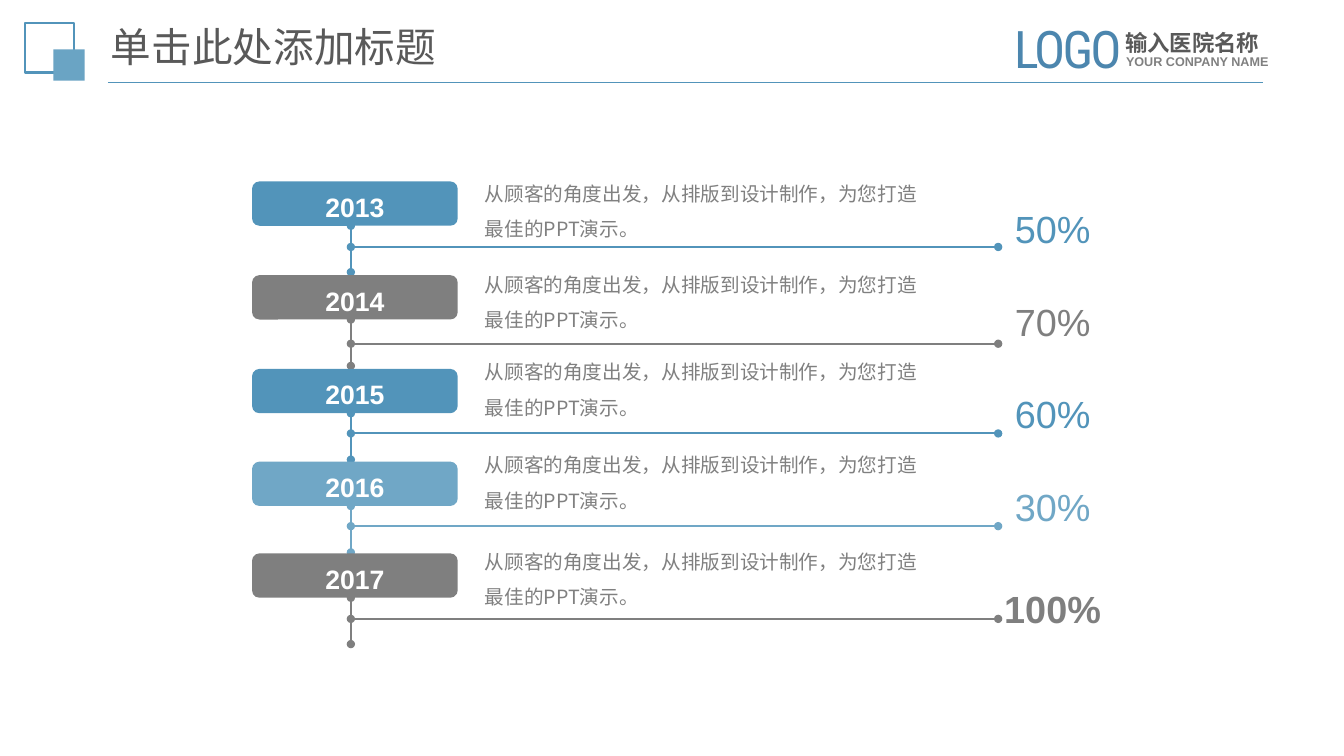
from dataclasses import dataclass
from lxml.etree import SubElement
from pptx import Presentation
from pptx.dml.color import RGBColor
from pptx.enum.shapes import MSO_CONNECTOR, MSO_SHAPE
from pptx.enum.text import MSO_ANCHOR, MSO_AUTO_SIZE, PP_ALIGN
from pptx.oxml.ns import qn
from pptx.util import Inches, Pt


@dataclass(frozen=True)
class Theme:
    blue: str = "5294BA"
    gray: str = "7F7F7F"
    light: str = "70A7C6"
    square: str = "6AA4C4"
    logo: str = "4C86AE"
    dark: str = "595959"
    body: str = "808080"
    white: str = "FFFFFF"
    cjk: str = "Noto Sans CJK SC"
    latin: str = "Arial"
    company: str = "Calibri"
    condensed: str = "Roboto Condensed"
    title_size: int = 29
    logo_size: int = 37
    company_size: int = 16
    tagline_size: int = 9
    year_size: int = 19
    body_size: int = 14
    percent_size: int = 27


T = Theme()
TITLE = "单击此处添加标题"
DESCRIPTION = "从顾客的角度出发，从排版到设计制作，为您打造最佳的PPT演示。"
BRAND = [
    ("输入医院名称", (11.06, 0.24, 1.75, 0.37), T.company_size, T.company, T.dark, True, 0),
    ("YOUR CONPANY NAME", (11.07, 0.49, 1.93, 0.25), T.tagline_size, T.latin, T.body, True, 0),
    ("LOGO", (9.96, 0.12, 1.41, 0.72), T.logo_size, T.condensed, T.logo, False, -200),
]
# year, percent, colour, bold percent, pill top, description top, rule height
MILESTONES = [
    ("2013", "50%", T.blue, False, 1.8, 1.64, 2.45),
    ("2014", "70%", T.gray, False, 2.73, 2.54, 3.41),
    ("2015", "60%", T.blue, False, 3.66, 3.41, 4.3),
    ("2016", "30%", T.light, False, 4.58, 4.33, 5.22),
    ("2017", "100%", T.gray, True, 5.49, 5.29, 6.14),
]
PILL_LEFT, PILL_W, PILL_H = 2.5, 2.04, 0.44
STEM_X, STEM_LEN, RULE_END = 3.48, 0.46, 9.9
PERCENT_MID, PERCENT_TOP, PERCENT_STEP = 10.44, 1.99, 0.92


def rgb(color):
    return RGBColor.from_string(color)


def box(at):
    return [Inches(v) for v in at]


def write(tf, text, size, font, color, bold=False, align=PP_ALIGN.LEFT,
          spacing=1.0, insets=(0.1, 0.05), anchor=MSO_ANCHOR.TOP, wrap=True, track=0):
    tf.word_wrap = wrap
    tf.vertical_anchor = anchor
    tf.margin_left = tf.margin_right = Inches(insets[0])
    tf.margin_top = tf.margin_bottom = Inches(insets[1])
    p = tf.paragraphs[0]
    p.alignment = align
    p.line_spacing = spacing
    r = p.add_run()
    r.text = text
    r.font.size = Pt(size)
    r.font.name = font
    r.font.bold = bold
    r.font.color.rgb = rgb(color)
    rpr = r.font._element
    SubElement(rpr, qn("a:ea")).set("typeface", font)
    if track:
        rpr.set("spc", str(track))


def add_text(shapes, at, *args, grow=False, **kwargs):
    tf = shapes.add_textbox(*box(at)).text_frame
    write(tf, *args, **kwargs)
    tf.auto_size = MSO_AUTO_SIZE.SHAPE_TO_FIT_TEXT if grow else MSO_AUTO_SIZE.NONE


def add_block(shapes, kind, at, fill=None, line=None):
    sp = shapes.add_shape(kind, *box(at))
    sp.shadow.inherit = False
    if fill:
        sp.fill.solid()
        sp.fill.fore_color.rgb = rgb(fill)
    else:
        sp.fill.background()
    if line:
        sp.line.color.rgb = rgb(line)
        sp.line.width = Pt(1.5)
    else:
        sp.line.fill.background()
    return sp


def add_line(shapes, start, end, color, width, dots=False):
    cx = shapes.add_connector(MSO_CONNECTOR.STRAIGHT, *box(start + end))
    cx.line.color.rgb = rgb(color)
    cx.line.width = Pt(width)
    if dots:
        ln = cx.line._get_or_add_ln()
        for tag in ("a:headEnd", "a:tailEnd"):
            SubElement(ln, qn(tag)).set("type", "oval")
    SubElement(cx._element.spPr, qn("a:effectLst"))


def add_header(s):
    title = s.shapes.title
    title.left, title.top, title.width, title.height = box((1, 0.25, 8.6, 0.48))
    write(title.text_frame, TITLE, T.title_size, T.cjk, T.dark,
          spacing=0.9, anchor=MSO_ANCHOR.MIDDLE)
    title.text_frame.auto_size = MSO_AUTO_SIZE.NONE
    add_line(s.shapes, (1.07, 0.82), (12.53, 0.82), T.blue, 1.25)
    squares = s.shapes.add_group_shape().shapes
    add_block(squares, MSO_SHAPE.RECTANGLE, (0.25, 0.23, 0.48, 0.49), line=T.blue)
    add_block(squares, MSO_SHAPE.RECTANGLE, (0.53, 0.49, 0.31, 0.31), fill=T.square)
    brand = s.shapes.add_group_shape().shapes
    for text, at, size, font, color, bold, track in BRAND:
        add_text(brand, at, text, size, font, color, bold, track=track, grow=True)


def add_milestone(shapes, i, year, percent, color, bold, pill_top, text_top, rule_y):
    pill = add_block(shapes, MSO_SHAPE.ROUNDED_RECTANGLE,
                     (PILL_LEFT, pill_top, PILL_W, PILL_H), fill=color)
    write(pill.text_frame, year, T.year_size, T.latin, T.white, True, PP_ALIGN.CENTER,
          1.2, (0.09, 0.05), MSO_ANCHOR.MIDDLE)
    stem_top = pill_top + PILL_H
    add_line(shapes, (STEM_X, stem_top), (STEM_X, stem_top + STEM_LEN), color, 1.5, True)
    add_line(shapes, (RULE_END, rule_y), (STEM_X, rule_y), color, 1.5, True)
    add_text(shapes, (4.71, text_top, 4.63, 0.77), DESCRIPTION, T.body_size, T.cjk,
             T.body, spacing=1.5, grow=True)
    width = 0.94 if bold else 0.72
    add_text(shapes, (PERCENT_MID - width / 2, PERCENT_TOP + i * PERCENT_STEP, width, 0.55),
             percent, T.percent_size, T.latin, color, bold, PP_ALIGN.CENTER,
             1.4 if bold else 1.0, (0, 0), MSO_ANCHOR.MIDDLE, False)


def main():
    prs = Presentation()
    prs.slide_width, prs.slide_height = Inches(13.33), Inches(7.5)
    s = prs.slides.add_slide(prs.slide_layouts[5])
    add_header(s)
    for i, milestone in enumerate(MILESTONES):
        add_milestone(s.shapes, i, *milestone)
    prs.save("out.pptx")


if __name__ == "__main__":
    main()
